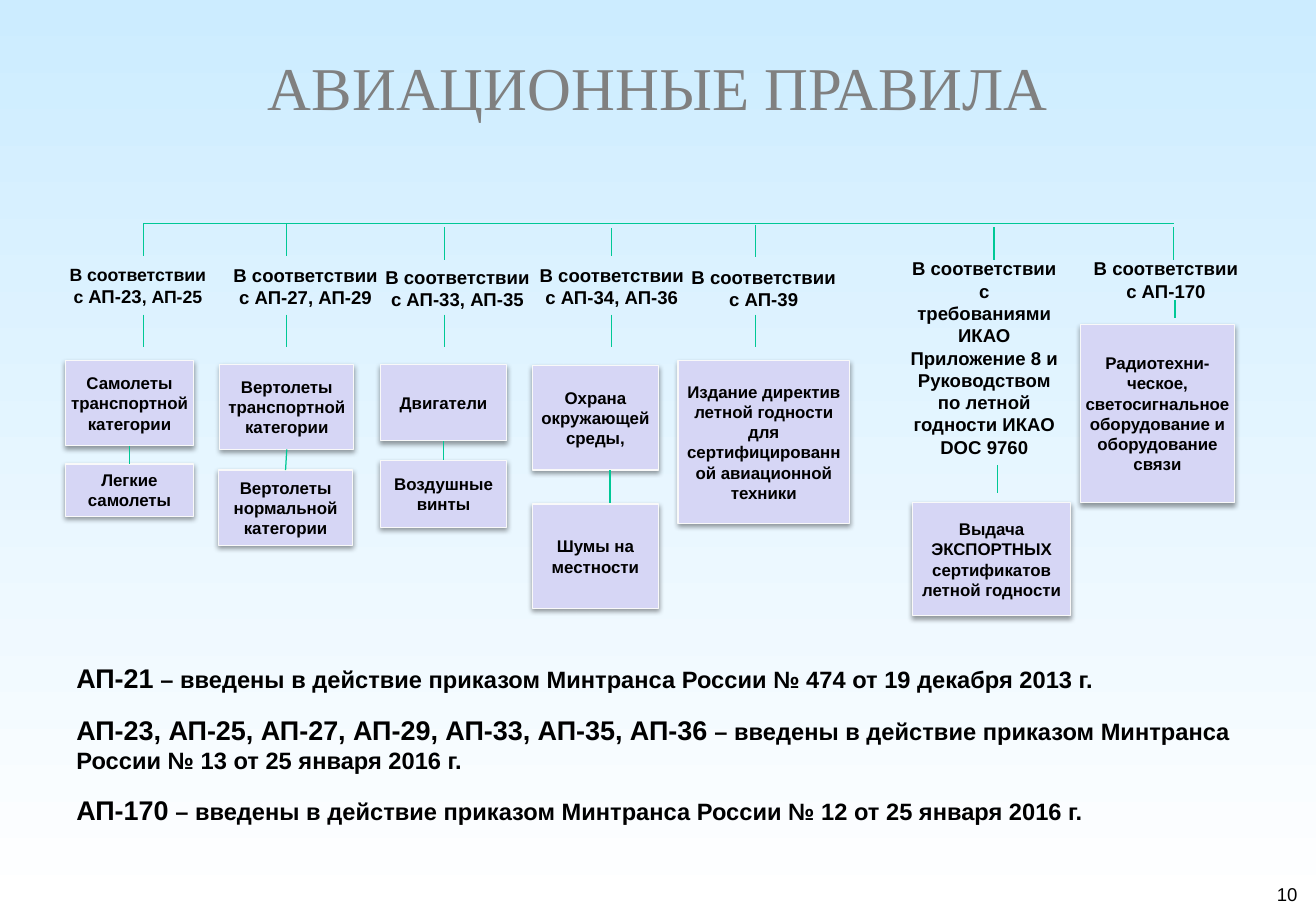
import pptx
import pptx.util
from dataclasses import dataclass
from lxml import etree
from pptx.dml.color import RGBColor
from pptx.enum.shapes import MSO_CONNECTOR, MSO_SHAPE
from pptx.enum.text import MSO_ANCHOR, PP_ALIGN
from pptx.oxml import parse_xml
from pptx.oxml.ns import nsdecls, qn
from pptx.util import Inches, Pt


@dataclass(frozen=True)
class Theme:
    sky: str = "CCECFF"
    white: str = "FFFFFF"
    ink: str = "000000"
    gray: str = "808080"
    box: str = "D6D6F5"
    edge: str = "F9F9F9"
    line: str = "00C896"
    sans: str = "Arial"
    serif: str = "Times New Roman"
    title: float = 36
    code: float = 16
    note: float = 14
    label: float = 11
    small: float = 10.5
    cell: float = 10
    thin: float = 0.75


THEME = Theme()
RULE = "В соответствии с "
ORDER = " – введены в действие приказом Минтранса России № "

# label text, place of its box
LABELS = [
    (RULE + "АП-27, АП-29", (1.81, 2.12, 1.41, 0.47)),
    (RULE + "АП-33, АП-35", (3.06, 2.14, 1.41, 0.47)),
    (RULE + "АП-34, АП-36", (4.33, 2.12, 1.41, 0.47)),
    (RULE + "АП-39", (5.58, 2.14, 1.41, 0.47)),
    ("В соответствии c требованиями ИКАО Приложение 8 и Руководством "
     "по летной годности ИКАО DOC 9760", (7.39, 2.07, 1.42, 1.77)),
    (RULE + "АП-170", (8.89, 2.07, 1.41, 0.47)),
]

# upper and lower box of a joined pair
PAIRS = [
    (("Самолеты транспортной категории", (0.54, 2.97, 1.05, 0.7)),
     ("Легкие\nсамолеты", (0.54, 3.82, 1.05, 0.43))),
    (("Вертолеты транспортной категории", (1.81, 3, 1.1, 0.7)),
     ("Вертолеты нормальной\nкатегории", (1.8, 3.87, 1.1, 0.62))),
    (("Двигатели", (3.13, 3, 1.04, 0.63)),
     ("Воздушные винты", (3.13, 3.79, 1.04, 0.55))),
]

BOXES = [
    ("Охрана окружающей среды,", (4.38, 3.01, 1.04, 0.86)),
    ("Шумы на местности", (4.38, 4.15, 1.04, 0.86)),
    ("Издание директив летной годности для сертифицированной "
     "авиационной техники", (5.58, 2.97, 1.41, 1.34)),
    ("Выдача ЭКСПОРТНЫХ сертификатов летной годности",
     (7.51, 4.14, 1.3, 0.93)),
    ("Радиотехни-ческое, светосигнальное оборудование и оборудование связи",
     (8.89, 2.67, 1.27, 1.47)),
]

# x, top, bottom of each drop from the main bar
DROPS = [(1.18, 1.84, 2.11), (2.36, 1.84, 2.11), (3.66, 1.87, 2.14),
         (5.03, 1.88, 2.11), (6.22, 1.85, 2.12), (8.18, 1.87, 2.14),
         (9.66, 1.87, 2.14)]
STEMS = [(x, 2.59, 2.86) for x, _, _ in DROPS[:5]] + [
    (5.02, 3.87, 4.14), (8.21, 3.83, 4.06), (9.67, 2.47, 2.62)]

NOTES = [
    ("АП-21", "474 от 19 декабря 2013 г."),
    ("АП-23, АП-25, АП-27, АП-29, АП-33, АП-35, АП-36",
     "13 от 25 января 2016 г."),
    ("АП-170", "12 от 25 января 2016 г."),
]


def color(code):
    return RGBColor.from_string(code)


def style(font, size, name=THEME.sans, ink=THEME.ink, bold=True):
    font.size = Pt(size)
    font.name = name
    font.bold = bold
    font.color.rgb = color(ink)


def write(frame, text, size, align=PP_ALIGN.CENTER, **look):
    """Fill the frame, one paragraph for each line of text."""
    frame.word_wrap = True
    for i, row in enumerate(text.split("\n")):
        para = frame.paragraphs[0] if i == 0 else frame.add_paragraph()
        para.text = row
        para.alignment = align
        style(para.font, size, **look)


def add_runs(para, runs):
    for text, size in runs:
        run = para.add_run()
        run.text = text
        style(run.font, size)


def add_frame(slide, place):
    frame = slide.shapes.add_textbox(*map(Inches, place)).text_frame
    frame.word_wrap = True
    return frame


def add_shade(shape):
    shape.shadow.inherit = False
    effects = shape._element.spPr.find(qn("a:effectLst"))
    effects.append(parse_xml(
        f'<a:outerShdw {nsdecls("a")} blurRad="{Pt(3.1)}" dist="{Pt(1.6)}" '
        f'dir="5400000" rotWithShape="0"><a:srgbClr val="{THEME.ink}">'
        '<a:alpha val="38000"/></a:srgbClr></a:outerShdw>'))


def add_box(slide, text, place):
    box = slide.shapes.add_shape(MSO_SHAPE.RECTANGLE, *map(Inches, place))
    box.fill.solid()
    box.fill.fore_color.rgb = color(THEME.box)
    box.line.color.rgb = color(THEME.edge)
    box.line.width = Pt(THEME.thin)
    add_shade(box)
    frame = box.text_frame
    frame.margin_left = frame.margin_right = Inches(0.04)
    frame.margin_top = frame.margin_bottom = Inches(0.04)
    frame.vertical_anchor = MSO_ANCHOR.MIDDLE
    write(frame, text, THEME.cell)
    return box


def add_line(slide, x1, y1, x2, y2):
    line = slide.shapes.add_connector(
        MSO_CONNECTOR.STRAIGHT, *map(Inches, (x1, y1, x2, y2)))
    line.line.color.rgb = color(THEME.line)
    line.line.width = Pt(THEME.thin)
    etree.SubElement(line._element.spPr, qn("a:effectLst"))
    return line


def add_pair(slide, upper, lower):
    top, low = add_box(slide, *upper), add_box(slide, *lower)
    link = add_line(slide, 0, 0, 1, 1)
    link.begin_connect(top, 2)
    link.end_connect(low, 0)


def add_notes(slide):
    frame = add_frame(slide, (0.53, 5.4, 9.92, 1.76))
    for i, (code, order) in enumerate(NOTES):
        para = frame.paragraphs[0] if i == 0 else frame.add_paragraph()
        if i:
            para.space_before = Pt(11.5)
        add_runs(para, [(code, THEME.code), (ORDER + order, THEME.note)])


def paint(slide):
    fill = slide.background.fill
    fill.gradient()
    fill.gradient_angle = 270
    for stop, code in zip(fill.gradient_stops, (THEME.sky, THEME.white)):
        stop.color.rgb = color(code)


def main():
    deck = pptx.Presentation()
    deck.slide_width, deck.slide_height = Inches(10.83), Inches(7.5)
    slide = deck.slides.add_slide(deck.slide_layouts[6])
    paint(slide)
    write(add_frame(slide, (0, 0.36, 10.83, 0.71)), "АВИАЦИОННЫЕ ПРАВИЛА",
          THEME.title, name=THEME.serif, ink=THEME.gray, bold=False)
    write(add_frame(slide, (10.41, 7.22, 0.56, 0.28)), "10", THEME.label,
          align=PP_ALIGN.LEFT, bold=False)
    for upper, lower in PAIRS:
        add_pair(slide, upper, lower)
    for text, place in BOXES:
        add_box(slide, text, place)

    first = add_frame(slide, (0.46, 2.12, 1.35, 0.46)).paragraphs[0]
    first.alignment = PP_ALIGN.CENTER
    add_runs(first, [(RULE, THEME.small), ("АП-23", THEME.label),
                     (", АП-25", THEME.small)])
    for text, place in LABELS:
        write(add_frame(slide, place), text, THEME.label)

    add_line(slide, DROPS[0][0], 1.84, DROPS[-1][0], 1.84)
    for x, top, low in DROPS + STEMS:
        add_line(slide, x, top, x, low)
    add_notes(slide)
    deck.save("out.pptx")


if __name__ == "__main__":
    main()
